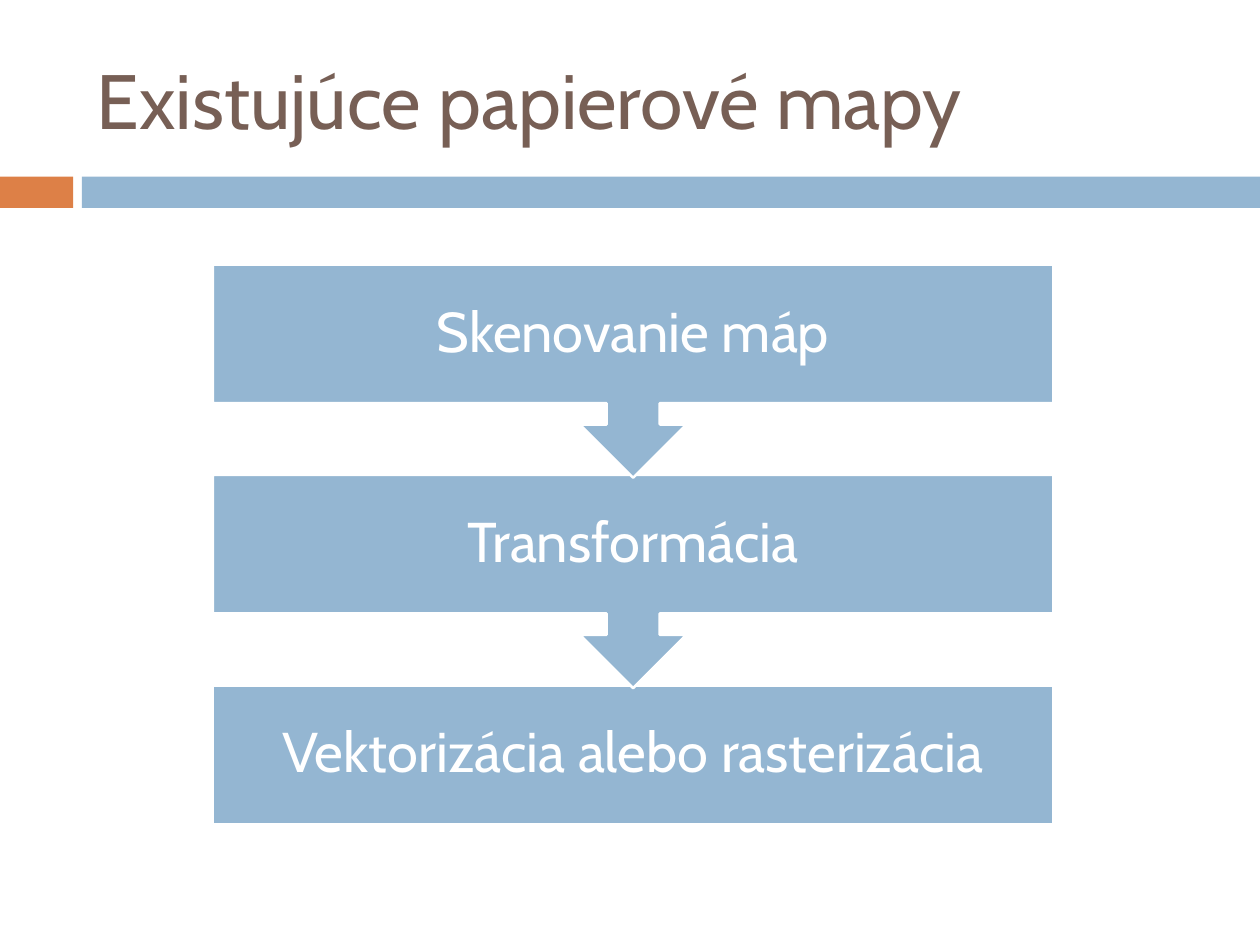
from pptx import Presentation
from pptx import util as u
from pptx.dml.color import RGBColor
from pptx.enum import shapes, text

WIDTH, HEIGHT = u.Inches(10), u.Inches(7.5)
ORANGE = RGBColor(0xDD, 0x80, 0x47)
BLUE = RGBColor(0x94, 0xB6, 0xD2)
BROWN = RGBColor(0x77, 0x5F, 0x55)
WHITE = RGBColor(0xFF, 0xFF, 0xFF)
FONT = "Cabin"
TITLE = "Existujúce papierové mapy"
STEPS = ["Skenovanie máp", "Transformácia", "Vektorizácia alebo rasterizácia"]


def share(left, top, width, height):
    return tuple(int(part) for part in
                 (WIDTH * left, HEIGHT * top, WIDTH * width, HEIGHT * height))


def add_block(page, kind, area, fill, outline=None):
    block = page.shapes.add_shape(kind, *area)
    block.shadow.inherit = False
    block.fill.solid()
    block.fill.fore_color.rgb = fill
    if outline is None:
        block.line.fill.background()
    else:
        block.line.color.rgb = outline
        block.line.width = u.Pt(1.5)
    return block


def add_label(page, area, words, size, color):
    box = page.shapes.add_textbox(*area)
    frame = box.text_frame
    frame.word_wrap = True
    frame.vertical_anchor = text.MSO_ANCHOR.MIDDLE
    frame.text = words
    font = frame.paragraphs[0].runs[0].font
    font.name, font.size, font.color.rgb = FONT, u.Pt(size), color
    return frame


def add_header(page, area):
    left, top, width, height = area
    add_label(page, (left + int(width * 0.067), top + int(height * 0.15),
                     int(width * 0.892), int(height * 0.65)), TITLE, 44, BROWN)
    bar_top, bar_height = top + int(height * 0.85), int(height * 0.15)
    for start, end, color in ((0, 0.058, ORANGE), (0.065, 1, BLUE)):
        bar = (left + int(width * start), bar_top,
               int(width * (end - start)), bar_height)
        add_block(page, shapes.MSO_SHAPE.RECTANGLE, bar, color)


def add_process(page, area):
    left, top, width, height = area
    box_height = int(height * 0.248)
    callout_height = int(height * 0.381)
    pitch = (height - box_height) // (len(STEPS) - 1)
    for index, words in reversed(list(enumerate(STEPS))):
        step_top = top + index * pitch
        if index == len(STEPS) - 1:
            add_block(page, shapes.MSO_SHAPE.RECTANGLE,
                      (left, step_top, width, box_height), BLUE, WHITE)
        else:
            callout = add_block(page, shapes.MSO_SHAPE.UP_ARROW_CALLOUT,
                                (left, step_top, width, callout_height), BLUE, WHITE)
            callout.rotation = 180
        frame = add_label(page, (left, step_top, width, box_height), words, 32, WHITE)
        frame.margin_left = frame.margin_right = u.Inches(0.25)
        frame.margin_top = frame.margin_bottom = u.Inches(0.25)
        para = frame.paragraphs[0]
        para.alignment = text.PP_ALIGN.CENTER
        para.line_spacing = 0.9


def main():
    deck = Presentation()
    deck.slide_width, deck.slide_height = WIDTH, HEIGHT
    page = deck.slides.add_slide(deck.slide_layouts[6])
    add_header(page, share(0, 0, 1, 0.22))
    add_process(page, share(0.169, 0.28, 0.667, 0.592))
    deck.save("out.pptx")


if __name__ == "__main__":
    main()
